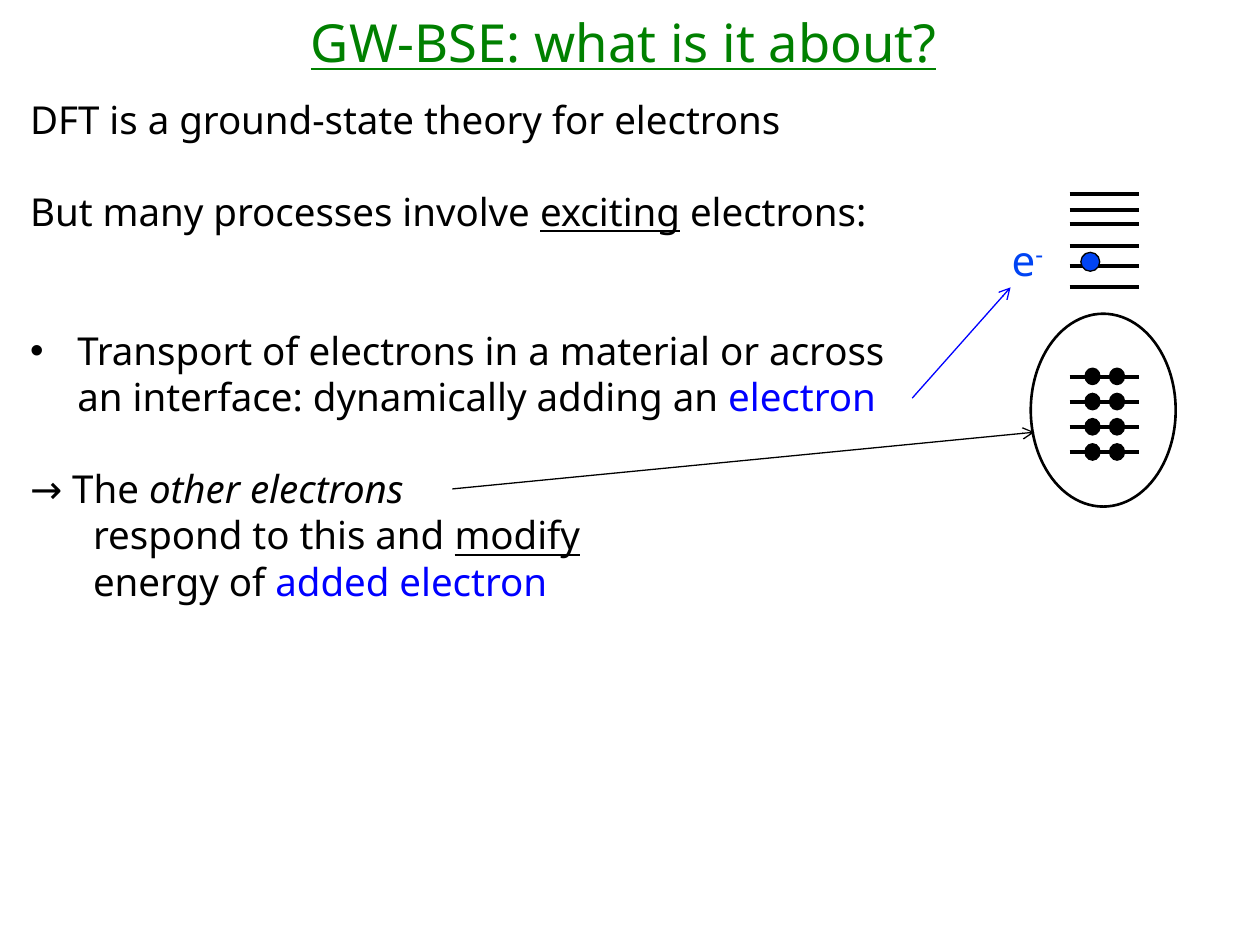
from pptx import Presentation
from pptx import util as u
from pptx.dml import color
from pptx.enum import shapes, text
from pptx.oxml import ns
from lxml import etree

Pt = u.Pt
FONT = "Noto Sans"
BLACK, BLUE, GREEN, ADDED = "000000", "0000FF", "008000", "0044F3"
PITCH = 26.4
EMPTY_LEVELS = [111, 120.2, 128.2, 140.4, 151.9, 164.2]
FILLED_LEVELS = [215.2 + 14.4 * step for step in range(4)]


def rgb(value):
    """Return the colour for a hex string."""
    return color.RGBColor.from_string(value)


def add_child(parent, tag, **attributes):
    """Append an XML element and its attributes."""
    return etree.SubElement(parent, ns.qn(tag), attributes)


def style_font(font, size, colour):
    """Set face, size and colour."""
    font.name, font.size = FONT, Pt(size)
    font.color.rgb = rgb(colour)


def place(box, left, top, width, height):
    """Move and size a shape."""
    box.left, box.top, box.width, box.height = map(Pt, (left, top, width, height))


def fill_title(box, wording):
    """Write the underlined heading."""
    place(box, 50.4, 2.9, 612, 41.8)
    box.text_frame.auto_size = text.MSO_AUTO_SIZE.NONE
    box.text_frame.vertical_anchor = text.MSO_ANCHOR.MIDDLE
    para = box.text_frame.paragraphs[0]
    para.text = wording
    para.alignment = text.PP_ALIGN.CENTER
    style_font(para.font, 30, GREEN)
    para.font.underline = True


def fill_paragraph(para, lines, skipped=0, bullet=False):
    """Write lines of (wording, style) spans after a gap of skipped lines."""
    style_font(para.font, 22, BLACK)
    para.line_spacing = Pt(PITCH)
    para.space_before = Pt(PITCH * skipped)
    para.space_after = Pt(0)
    for number, spans in enumerate(lines):
        if number:
            para.add_line_break()
        for wording, style in spans:
            span = para.add_run()
            span.text = wording
            style_font(span.font, 22, BLUE if style == "blue" else BLACK)
            if style == "underline":
                span.font.underline = True
            if style == "italic":
                span.font.italic = True
    properties = para._p.get_or_add_pPr()
    hanging = Pt(27) if bullet else 0
    properties.set("marL", str(hanging))
    properties.set("indent", str(-hanging))
    if bullet:
        add_child(properties, "a:buFont", typeface="Arial")
        add_child(properties, "a:buChar", char="•")
    else:
        add_child(properties, "a:buNone")


def fill_body(box, entries):
    """Write the body paragraphs."""
    place(box, 10, 49.7, 526.3, 300.2)
    frame = box.text_frame
    frame.auto_size = text.MSO_AUTO_SIZE.NONE
    frame.vertical_anchor = text.MSO_ANCHOR.TOP
    frame.margin_top = Pt(5)
    for number, entry in enumerate(entries):
        para = frame.add_paragraph() if number else frame.paragraphs[0]
        fill_paragraph(para, **entry)


def add_line(holder, start, end, colour=BLACK, weight=0.75, arrow=False):
    """Draw a straight line, with an open arrowhead if asked."""
    line = holder.add_connector(
        shapes.MSO_CONNECTOR.STRAIGHT, *map(Pt, (*start, *end)))
    line.line.color.rgb = rgb(colour)
    line.line.width = Pt(weight)
    if arrow:
        add_child(line.line._get_or_add_ln(), "a:tailEnd", type="arrow")
    add_child(line._element.spPr, "a:effectLst")


def add_ellipse(holder, left, top, width, height, fill=None, weight=0.75):
    """Draw a black-edged ellipse, hollow without a fill."""
    ellipse = holder.add_shape(
        shapes.MSO_SHAPE.OVAL, *map(Pt, (left, top, width, height)))
    ellipse.shadow.inherit = False
    if fill:
        ellipse.fill.solid()
        ellipse.fill.fore_color.rgb = rgb(fill)
    else:
        ellipse.fill.background()
    ellipse.line.color.rgb = rgb(BLACK)
    ellipse.line.width = Pt(weight)


def add_electron_label(holder):
    """Write e with a raised minus sign."""
    box = holder.add_textbox(*map(Pt, (571, 130.3, 37.4, 36)))
    box.text_frame.word_wrap = True
    para = box.text_frame.paragraphs[0]
    style_font(para.font, 24, ADDED)
    for wording in "e-":
        span = para.add_run()
        span.text = wording
        style_font(span.font, 24, ADDED)
    span.font._element.set("baseline", "30000")


def add_energy_levels(holder):
    """Draw the levels and their electrons."""
    for height in EMPTY_LEVELS + FILLED_LEVELS:
        add_line(holder, (611.2, height), (650.9, height), weight=2.25)
    for height in FILLED_LEVELS:
        for left in (620, 634):
            add_ellipse(holder, left, height - 4.8, 8.6, 9.4, BLACK)
    add_ellipse(holder, 617.6, 144.2, 10.8, 10.8, ADDED)
    add_electron_label(holder)


def main():
    """Build and save the slide."""
    deck = Presentation()
    deck.slide_width, deck.slide_height = Pt(720), Pt(540)
    page = deck.slides.add_slide(deck.slide_layouts[1])
    fill_title(page.shapes.title, "GW-BSE: what is it about?")
    fill_body(page.placeholders[1], [
        {"lines": [[("DFT is a ground-state theory for electrons", "")]]},
        {"lines": [[("But many processes involve ", ""),
                    ("exciting", "underline"), (" electrons:", "")]],
         "skipped": 1},
        {"lines": [[("Transport of electrons in a material or across", "")],
                   [("an interface: dynamically adding an ", ""),
                    ("electron", "blue")]],
         "skipped": 2, "bullet": True},
        {"lines": [[("→ The ", ""), ("other electrons", "italic")],
                   [("\trespond to this and ", ""), ("modify", "underline")],
                   [("\tenergy of ", ""), ("added electron", "blue")]],
         "skipped": 1},
    ])
    add_energy_levels(page.shapes.add_group_shape().shapes)
    add_line(page.shapes, (521.3, 227.5), (577.5, 164.2), BLUE, arrow=True)
    add_ellipse(page.shapes, 589, 179.3, 82.8, 110.2, weight=1.5)
    add_line(page.shapes, (258.5, 279.4), (591.1, 247), arrow=True)
    deck.save("out.pptx")


if __name__ == "__main__":
    main()
